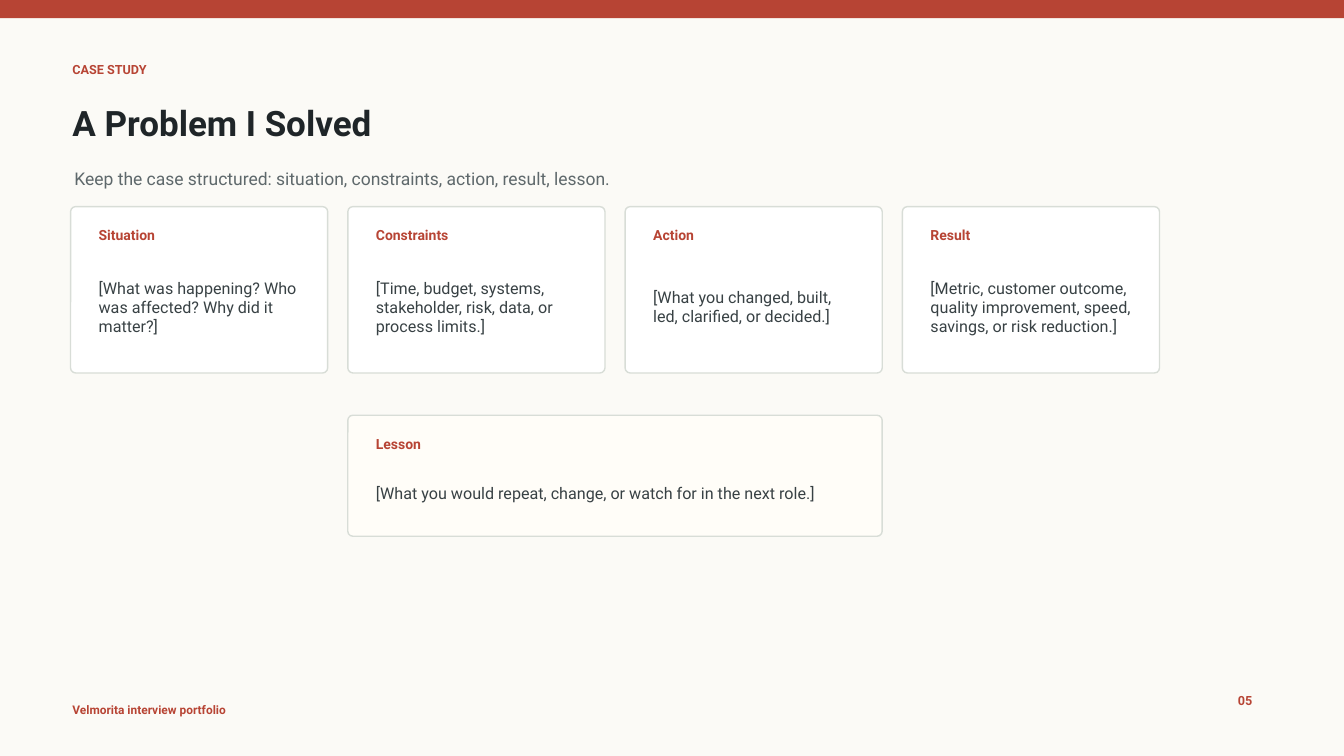
from pptx import Presentation
from pptx.dml.color import RGBColor
from pptx.enum.shapes import MSO_SHAPE
from pptx.enum.text import MSO_ANCHOR, PP_ALIGN
from pptx.util import Emu, Pt

PX = 9144  # 100 px to the inch
W, H = 1333, 750
FONT = "Roboto"
COLORS = {
    "paper": "FBFAF6", "accent": "B74434", "title": "1F2528", "muted": "5E686B",
    "body": "384144", "card": "FFFFFF", "lesson": "FFFDF8", "border": "D8DDD7",
}
CARDS = [
    ("Situation", "[What was happening? Who was affected? Why did it matter?]"),
    ("Constraints", "[Time, budget, systems, stakeholder, risk, data, or process limits.]"),
    ("Action", "[What you changed, built, led, clarified, or decided.]"),
    ("Result", "[Metric, customer outcome, quality improvement, speed, savings, or risk reduction.]"),
]
LESSON = ("Lesson", "[What you would repeat, change, or watch for in the next role.]")


def px(*lengths):
    return [Emu(n * PX) for n in lengths]


def rgb(name):
    return RGBColor.from_string(COLORS[name])


def add_text(s, box, text, size, color, bold=False):
    tf = s.shapes.add_textbox(*px(*box)).text_frame
    tf.word_wrap = True
    tf.vertical_anchor = MSO_ANCHOR.MIDDLE
    p = tf.paragraphs[0]
    p.alignment = PP_ALIGN.LEFT
    r = p.add_run()
    r.text = text
    r.font.name, r.font.size, r.font.bold = FONT, Pt(size), bold
    r.font.color.rgb = rgb(color)


def add_box(s, kind, box, fill, line=None):
    sp = s.shapes.add_shape(kind, *px(*box))
    sp.shadow.inherit = False
    sp.fill.solid()
    sp.fill.fore_color.rgb = rgb(fill)
    if line:
        sp.line.color.rgb = rgb(line)
        sp.line.width = Pt(1)
    else:
        sp.line.fill.background()
    return sp


def add_card(s, box, heading, body, fill="card"):
    x, y, w, h = box
    pad, radius = 18, 5
    sp = add_box(s, MSO_SHAPE.ROUNDED_RECTANGLE, box, fill, "border")
    sp.adjustments[0] = radius / h
    add_text(s, (x + pad, y + 16, w - 2 * pad, 25), heading, 10, "accent", True)
    add_text(s, (x + pad, y + 48, w - 2 * pad, h - 62), body, 11.5, "body")


def add_header(s, x, y):
    add_text(s, (x, y, 480, 22), "CASE STUDY", 9, "accent", True)
    add_text(s, (x, y + 36, 980, 55), "A Problem I Solved", 25, "title", True)
    add_text(s, (x + 2, y + 98, 1080, 42),
             "Keep the case structured: situation, constraints, action, result, lesson.",
             12.5, "muted")


def add_footer(s, x, y):
    add_text(s, (x, y + 12, 300, 20), "Velmorita interview portfolio", 8.5, "accent", True)
    add_text(s, (x + 1156, y, 50, 25), "05", 9, "accent", True)


def add_case(s, x, y):
    w, gap = 255, 20
    step = w + gap
    for i, (heading, body) in enumerate(CARDS):
        add_card(s, (x + i * step, y, w, 165), heading, body)
    # The lesson spans the two middle columns
    add_card(s, (x + step, y + 207, step + w, 120), *LESSON, fill="lesson")


def main():
    prs = Presentation()
    prs.slide_width, prs.slide_height = px(W, H)
    s = prs.slides.add_slide(prs.slide_layouts[6])
    s.background.fill.solid()
    s.background.fill.fore_color.rgb = rgb("paper")

    # Top band
    add_box(s, MSO_SHAPE.RECTANGLE, (0, 0, W, 18), "accent")
    add_footer(s, 62, 682)
    add_header(s, 62, 58)
    add_case(s, 70, 205)
    prs.save("out.pptx")


if __name__ == "__main__":
    main()
